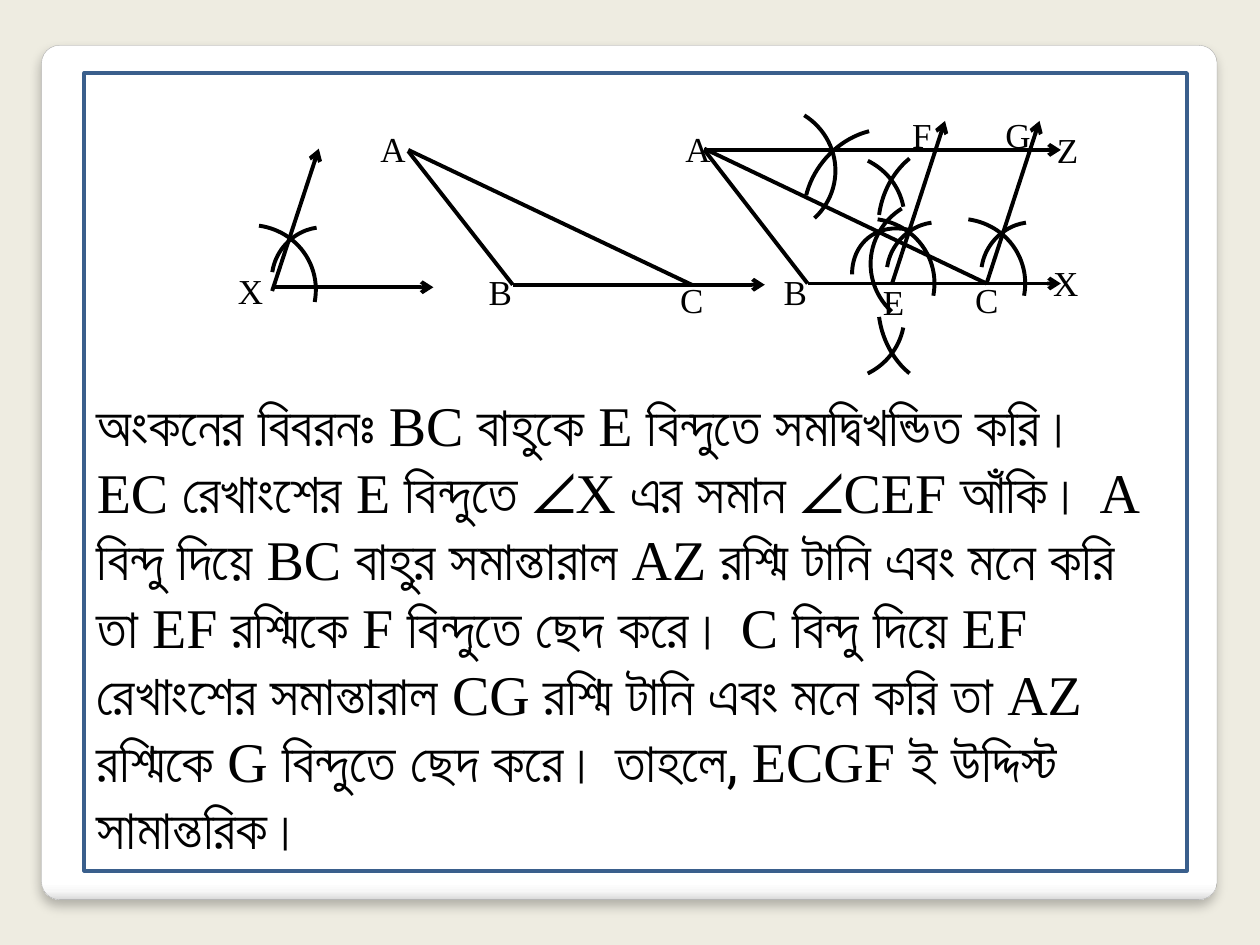
from itertools import groupby
from lxml.etree import SubElement
from pptx import Presentation
from pptx.dml.color import RGBColor
from pptx.enum.shapes import MSO_CONNECTOR, MSO_SHAPE
from pptx.oxml.ns import qn
from pptx.util import Inches, Pt

BLACK, WHITE = "000000", "FFFFFF"
LATIN_FONT, BENGALI_FONT = "Times New Roman", "Roboto"

DESCRIPTION = [
    "অংকনের বিবরনঃ BC বাহুকে E বিন্দুতে সমদ্বিখন্ডিত করি।",
    "EC রেখাংশের E বিন্দুতে ∠X এর সমান ∠CEF আঁকি। A",
    "বিন্দু দিয়ে BC বাহুর সমান্তারাল AZ রশ্মি টানি এবং মনে করি",
    "তা EF রশ্মিকে F বিন্দুতে ছেদ করে। C বিন্দু দিয়ে EF",
    "রেখাংশের সমান্তারাল CG রশ্মি টানি এবং মনে করি তা AZ",
    "রশ্মিকে G বিন্দুতে ছেদ করে। তাহলে, ECGF ই উদ্দিস্ট",
    "সামান্তরিক।",
]

SEGMENTS = [
    ((3.24, 1.19), (5.49, 2.26)),
    ((4.07, 2.26), (3.24, 1.2)),
    ((5.59, 1.18), (7.83, 2.25)),
    ((6.41, 2.25), (5.59, 1.19)),
]
RAYS = [
    ((4.07, 2.26), (6.07, 2.26)),
    ((2.16, 2.31), (2.53, 1.18)),
    ((2.16, 2.28), (3.44, 2.28)),
    ((6.41, 2.25), (8.42, 2.25)),
    ((5.59, 1.19), (8.42, 1.19)),
    ((7.83, 2.25), (8.25, 0.96)),
    ((7.08, 2.25), (7.5, 0.96)),
]

WIDE, SMALL, TALL = (1.09, 1.05), (0.73, 0.79), (1, 1.21)
BASE_SWEEP, ANGLE_SWEEP = (304.12, 33.08), (322.21, 44.88)
LONG_SWEEP, UPPER_SWEEP, LOWER_SWEEP = (304.12, 44.88), (309.22, 359.87), (346.98, 44.88)
ARCS = [
    ((1.42, 1.79), WIDE, 335.7, BASE_SWEEP, None),
    ((7.05, 1.74), WIDE, 335.7, BASE_SWEEP, None),
    ((6.33, 1.74), WIDE, 335.7, BASE_SWEEP, None),
    ((2.17, 1.79), SMALL, 221.7, ANGLE_SWEEP, None),
    ((7.05, 1.75), SMALL, 221.7, ANGLE_SWEEP, None),
    ((7.8, 1.75), SMALL, 221.7, ANGLE_SWEEP, None),
    ((5.54, 0.83), WIDE, 0, LONG_SWEEP, None),
    ((6.91, 1.57), WIDE, 0, LONG_SWEEP, "flipH"),
    ((6.43, 0.98), TALL, 221.7, ANGLE_SWEEP, None),
    ((6.71, 1.87), (0.99, 0.8), 229.7, ANGLE_SWEEP, None),
    ((6.09, 1.22), WIDE, 349.1, UPPER_SWEEP, None),
    ((6.09, 1.97), WIDE, 10.9, UPPER_SWEEP, "flipV"),
    ((6.98, 1.13), TALL, 196.4, LOWER_SWEEP, None),
    ((6.98, 1.88), TALL, 163.6, LOWER_SWEEP, "flipV"),
]

LABELS = [
    ("A", 2.92, 0.96, 0.41), ("B", 3.78, 2.1, 0.39), ("C", 5.3, 2.16, 0.39),
    ("X", 1.79, 2.09, 0.41), ("A", 5.34, 0.96, 0.41), ("B", 6.12, 2.1, 0.39),
    ("C", 7.64, 2.16, 0.39), ("E", 6.91, 2.18, 0.37), ("G", 7.88, 0.85, 0.41),
    ("F", 7.14, 0.85, 0.36), ("Z", 8.29, 0.97, 0.37), ("X", 8.26, 2.03, 0.41),
]


def color(value):
    return RGBColor.from_string(value)


def set_line(item, value, width):
    item.line.color.rgb = color(value)
    item.line.width = Pt(width)


def add_figure(kind, left, top, width, height):
    figure = page.shapes.add_shape(kind, *map(Inches, (left, top, width, height)))
    figure.shadow.inherit = False
    figure.fill.background()
    return figure


def add_line(start, end, arrow):
    line = page.shapes.add_connector(MSO_CONNECTOR.STRAIGHT, *map(Inches, start + end))
    set_line(line, BLACK, 2.25)
    if arrow:
        SubElement(line.line._get_or_add_ln(), qn("a:tailEnd"), type="arrow")
    SubElement(line._element.spPr, qn("a:effectLst"))


def add_arc(corner, size, rotation, sweep, flip):
    arc = add_figure(MSO_SHAPE.ARC, *corner, *size)
    for index, degrees in enumerate(sweep):
        arc.adjustments[index] = degrees * 60000 / 100000
    arc.rotation = rotation
    if flip:
        arc._element.spPr.xfrm.set(flip, "1")
    set_line(arc, BLACK, 2.25)


def add_text(left, top, width, height, wrap):
    box = page.shapes.add_textbox(*map(Inches, (left, top, width, height)))
    box.text_frame.word_wrap = wrap
    return box.text_frame


def split_scripts(text):
    latin = False
    marked = []
    for letter in text:
        if letter != " ":
            latin = "A" <= letter <= "Z"
        marked.append((latin, letter))
    for latin, group in groupby(marked, key=lambda pair: pair[0]):
        yield latin, "".join(letter for _, letter in group)


def add_card():
    card = add_figure(MSO_SHAPE.ROUNDED_RECTANGLE, 0.33, 0.36, 9.33, 6.78)
    card.adjustments[0] = 0.021
    set_line(card, "A4A4A4", 0.16)
    card.fill.gradient()
    card.fill.gradient_angle = 270
    properties = card._element.spPr
    stops = properties.find(qn("a:gradFill")).find(qn("a:gsLst"))
    stops.clear()
    for percent, value in [(0, WHITE), (98, WHITE), (99, "F7F7F7"), (100, "DADADA")]:
        stop = SubElement(stops, qn("a:gs"), pos=str(percent * 1000))
        SubElement(stop, qn("a:srgbClr"), val=value)
    shadow = SubElement(properties.find(qn("a:effectLst")), qn("a:outerShdw"),
                        blurRad=str(Pt(6)), dist=str(Pt(4)), dir="5400000",
                        algn="t", rotWithShape="0")
    tint = SubElement(shadow, qn("a:srgbClr"), val=BLACK)
    SubElement(tint, qn("a:alpha"), val="25000")


deck = Presentation()
deck.slide_width, deck.slide_height = Inches(10), Inches(7.5)
page = deck.slides.add_slide(deck.slide_layouts[6])
page.background.fill.solid()
page.background.fill.fore_color.rgb = color("EEECE1")
add_card()

for start, end in SEGMENTS:
    add_line(start, end, False)
for start, end in RAYS:
    add_line(start, end, True)
for arc in ARCS:
    add_arc(*arc)

for letter, left, top, width in LABELS:
    para = add_text(left, top, width, 0.44, False).paragraphs[0]
    para.text = letter
    para.font.size = Pt(20)
    para.font.name = LATIN_FONT
    para.font.color.rgb = color(BLACK)

frame = add_figure(MSO_SHAPE.RECTANGLE, 0.67, 0.58, 8.75, 6.33)
set_line(frame, "3A5F8C", 2.25)

body = add_text(0.67, 3.05, 8.75, 3.87, True)
for index, text in enumerate(DESCRIPTION):
    para = body.add_paragraph() if index else body.paragraphs[0]
    para.font.size = Pt(32)
    para.font.color.rgb = color(BLACK)
    for latin, words in split_scripts(text):
        span = para.add_run()
        span.text = words
        span.font.name = LATIN_FONT if latin else BENGALI_FONT
        SubElement(span.font._element, qn("a:cs"), typeface=span.font.name)

deck.save("out.pptx")
